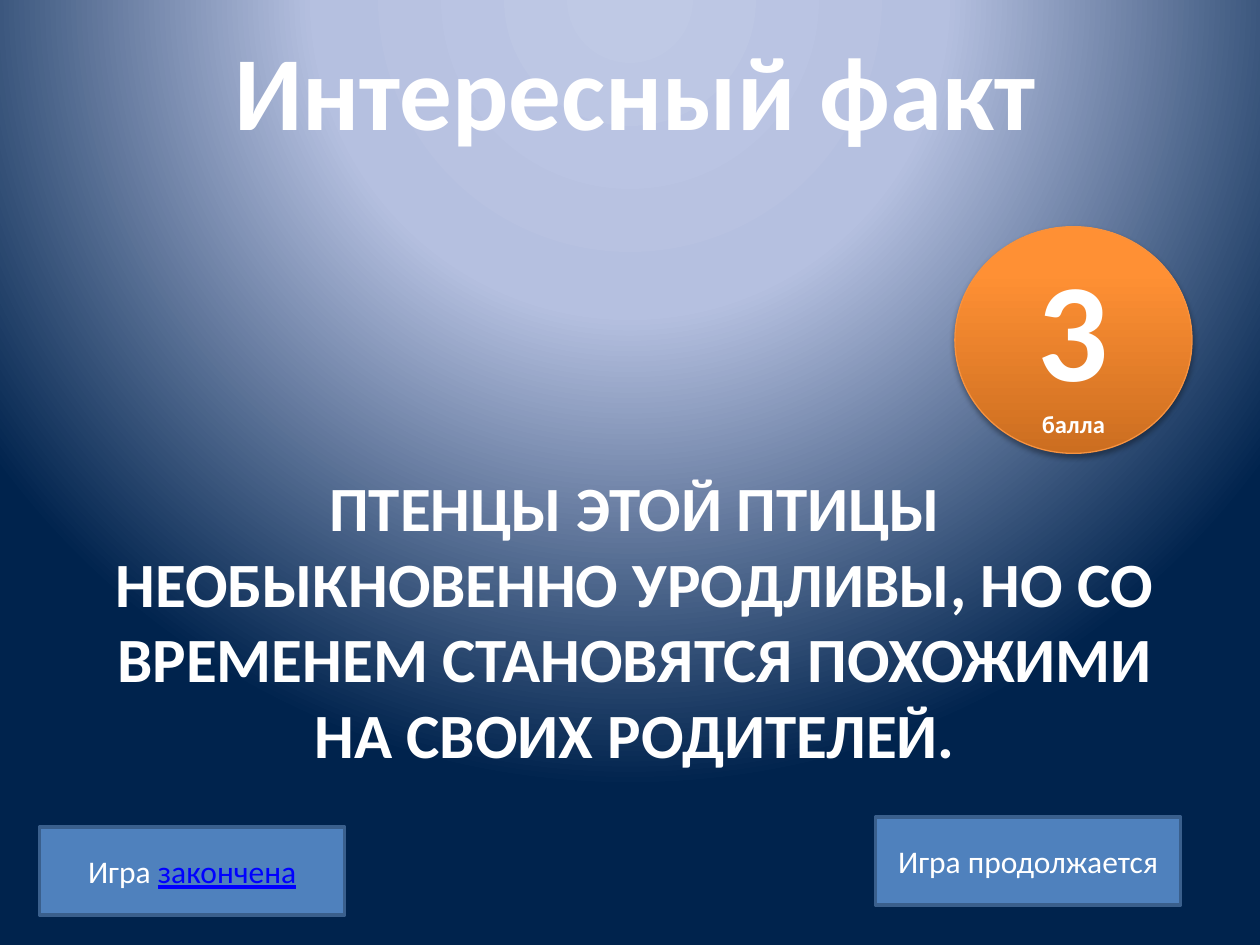
"""Builds a quiz slide about an interesting bird fact."""
from lxml import etree
from pptx import Presentation
from pptx.dml.color import RGBColor
from pptx.enum.shapes import MSO_SHAPE
from pptx.enum.text import MSO_ANCHOR, PP_ALIGN
from pptx.oxml.ns import qn
from pptx.util import Cm, Pt

OVAL, RECTANGLE = MSO_SHAPE.OVAL, MSO_SHAPE.RECTANGLE
TOP, MIDDLE, BOTTOM = MSO_ANCHOR.TOP, MSO_ANCHOR.MIDDLE, MSO_ANCHOR.BOTTOM
CENTER = PP_ALIGN.CENTER

FONT = "Calibri"
COLORS = {
    "white": "FFFFFF",
    "link": "0000FF",
    "button": "4F81BD",
    "button_edge": "3A5F8C",
    "badge_edge": "F69240",
    "shadow": "000000",
}
SKY = [(0, "BFC9E5"), (40, "B5C0E0"), (100, "00234D")]
ORANGE = [(0, "CC6E20"), (80, "FF9034"), (100, "FF9136")]


def add_node(parent, tag, **attributes):
    """Append an XML element with the given attributes."""
    node = etree.SubElement(parent, qn(tag))
    for name, value in attributes.items():
        node.set(name, str(value))
    return node


class QuizSlide:
    """Holds the style and the current slide."""

    def __init__(self, slide):
        self.slide = slide

    def gradient(self, fill, owner, stops):
        """Fill the owner with colour stops and return the gradient element."""
        fill.gradient()
        gradient = owner.find(qn("a:gradFill"))
        for child in list(gradient):
            gradient.remove(child)
        stop_list = add_node(gradient, "a:gsLst")
        for position, color in stops:
            stop = add_node(stop_list, "a:gs", pos=position * 1000)
            add_node(stop, "a:srgbClr", val=color)
        return gradient

    def background(self, stops):
        """Paint a round glow centred above the slide."""
        fill = self.slide.background.fill
        fill.solid()
        owner = self.slide.element.find(".//" + qn("p:bgPr"))
        glow = add_node(self.gradient(fill, owner, stops), "a:path", path="circle")
        add_node(glow, "a:fillToRect", l=50000, t=-80000, r=50000, b=180000)

    def set_lines(self, shape, lines, anchor):
        """Set lines of (text, size, bold) as centred paragraphs."""
        frame = shape.text_frame
        frame.word_wrap = True
        frame.vertical_anchor = anchor
        frame.text = "\n".join(text for text, _, _ in lines)
        for paragraph, (_, size, bold) in zip(frame.paragraphs, lines):
            paragraph.alignment = CENTER
            for run in paragraph.runs:
                self.style(run, size, bold)

    def style(self, run, size, bold=False, color="white"):
        """Format one run."""
        run.font.name = FONT
        run.font.size = Pt(size)
        run.font.bold = bold
        run.font.color.rgb = RGBColor.from_string(COLORS[color])

    def text(self, box, text, size, anchor=TOP):
        """Add a bold centred text box and return its paragraph."""
        shape = self.slide.shapes.add_textbox(*map(Cm, box))
        self.set_lines(shape, [(text, size, True)], anchor)
        return shape.text_frame.paragraphs[0]

    def heading(self, box, text, size):
        """Add a bottom-anchored heading with proportional space before."""
        paragraph = self.text(box, text, size, BOTTOM)
        properties = paragraph._p.get_or_add_pPr()
        add_node(add_node(properties, "a:spcBef"), "a:spcPct", val=20000)

    def shape(self, kind, box, edge, width):
        """Add an outlined preset shape."""
        shape = self.slide.shapes.add_shape(kind, *map(Cm, box))
        shape.shadow.inherit = False
        shape.line.color.rgb = RGBColor.from_string(COLORS[edge])
        shape.line.width = Pt(width)
        return shape

    def badge(self, box, points, unit):
        """Add the round score badge with a soft shadow."""
        badge = self.shape(OVAL, box, "badge_edge", 0.75)
        properties = badge.element.spPr
        gradient = self.gradient(badge.fill, properties, ORANGE)
        add_node(gradient, "a:lin", ang=270 * 60000, scaled=0)
        shadow = add_node(
            properties.find(qn("a:effectLst")), "a:outerShdw",
            blurRad=Pt(3.1), dist=Pt(1.8), dir=90 * 60000, rotWithShape=0,
        )
        color = add_node(shadow, "a:srgbClr", val=COLORS["shadow"])
        add_node(color, "a:alpha", val=35000)
        self.set_lines(badge, [(points, 80, True), (unit, 14, True)], MIDDLE)

    def button(self, left, top, text, linked=""):
        """Add a button, optionally ending in link-styled text."""
        button = self.shape(RECTANGLE, (left, top, 6.15, 1.78), "button_edge", 2)
        button.fill.solid()
        button.fill.fore_color.rgb = RGBColor.from_string(COLORS["button"])
        self.set_lines(button, [(text, 18, False)], MIDDLE)
        if linked:
            run = button.text_frame.paragraphs[0].add_run()
            run.text = linked
            self.style(run, 18, color="link")
            run.font.underline = True


def main():
    """Build and save the presentation."""
    deck = Presentation()
    deck.slide_width, deck.slide_height = Cm(25.4), Cm(19.05)
    quiz = QuizSlide(deck.slides.add_slide(deck.slide_layouts[6]))
    quiz.background(SKY)
    quiz.text(
        (2, 9.32, 21.6, 6.7),
        "ПТЕНЦЫ ЭТОЙ ПТИЦЫ НЕОБЫКНОВЕННО УРОДЛИВЫ, НО СО ВРЕМЕНЕМ "
        "СТАНОВЯТСЯ ПОХОЖИМИ НА СВОИХ РОДИТЕЛЕЙ.",
        36,
    )
    quiz.heading((2, 0.4, 21.6, 2.77), "Интересный факт", 60)
    quiz.badge((19.25, 4.57, 4.78, 4.57), "3", "балла")
    quiz.button(0.8, 16.67, "Игра ", "закончена")
    quiz.button(17.65, 16.47, "Игра продолжается")
    deck.save("out.pptx")


if __name__ == "__main__":
    main()
